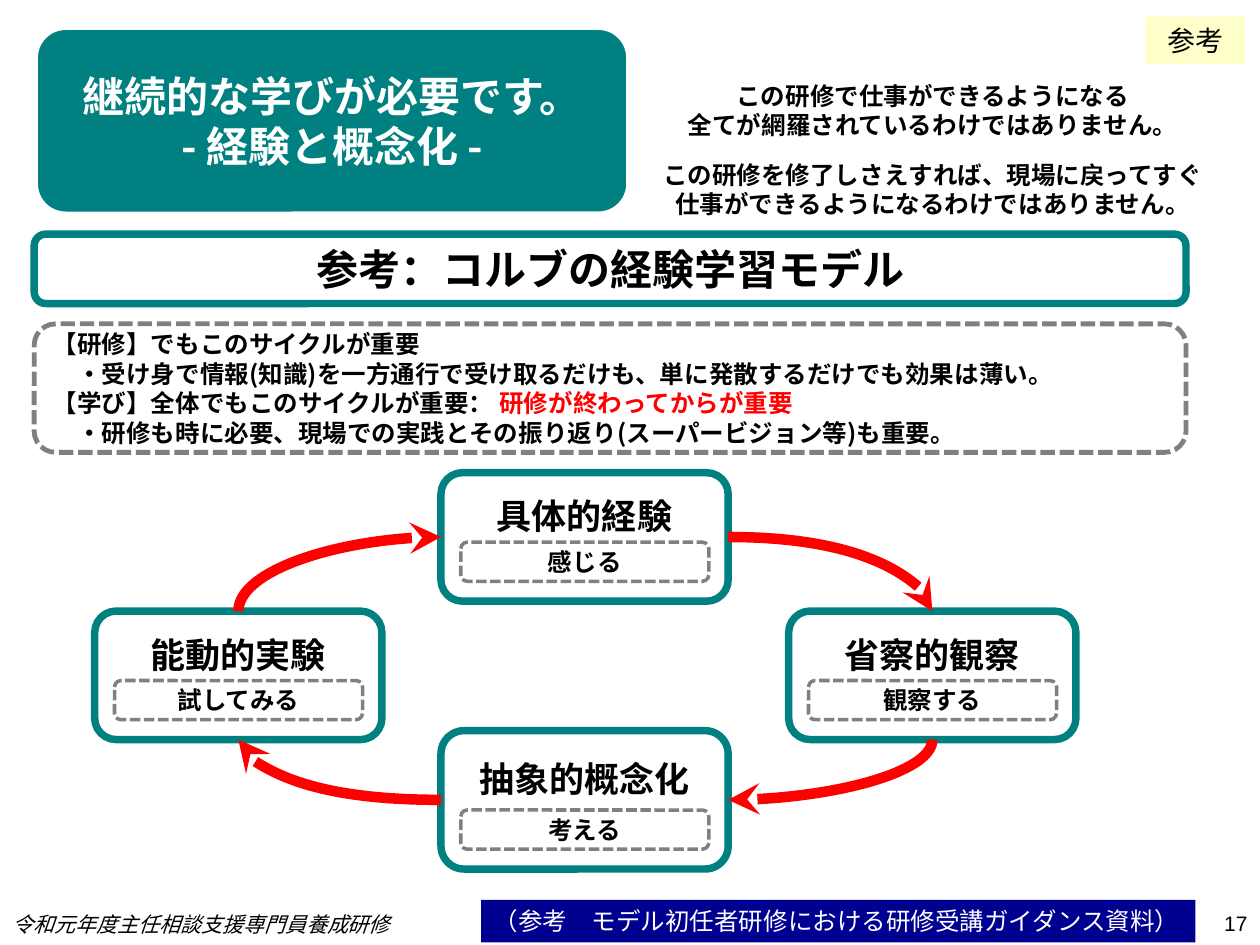
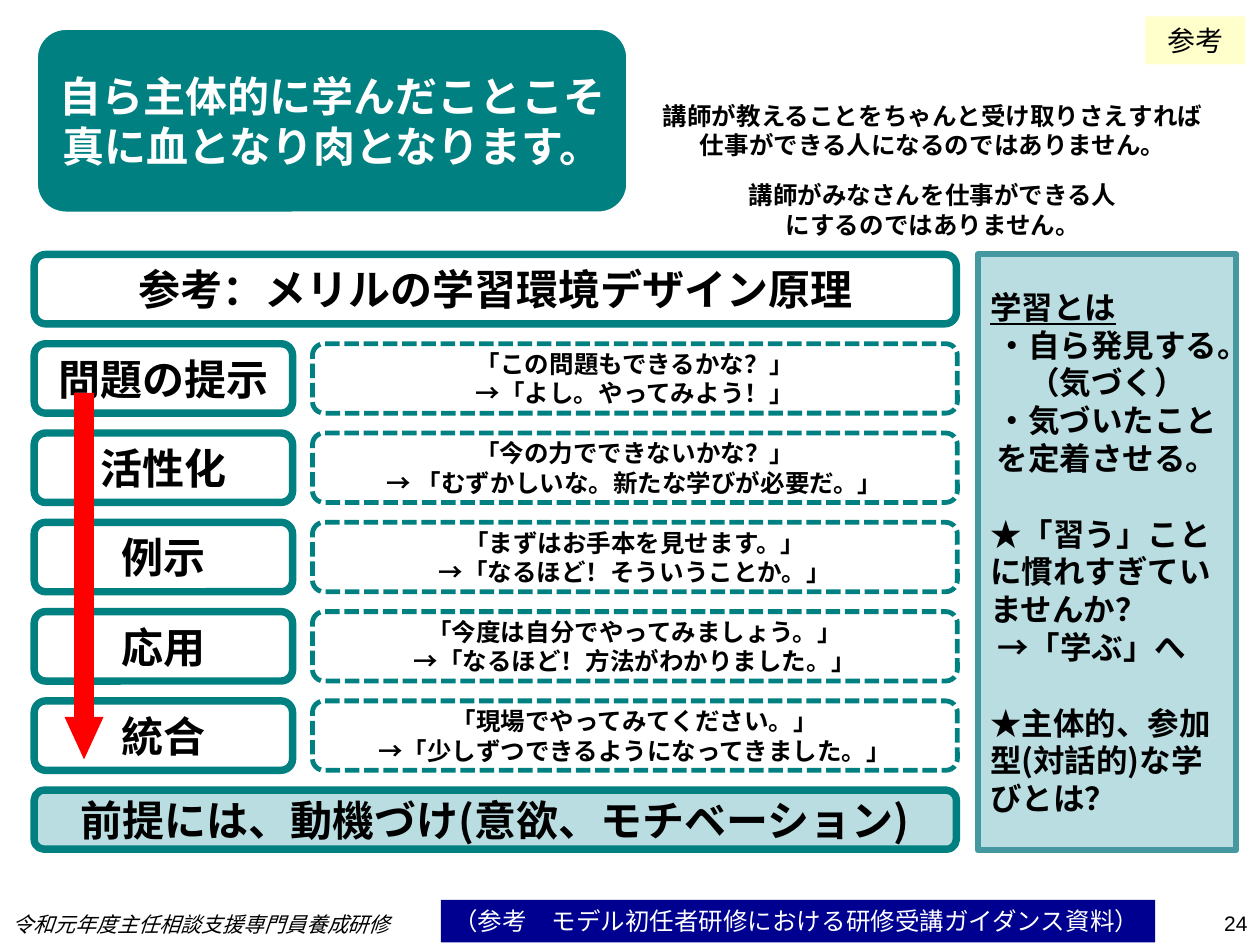
from lxml.etree import SubElement
from pptx import Presentation
from pptx.dml.color import RGBColor
from pptx.enum.dml import MSO_LINE
from pptx.enum.shapes import MSO_CONNECTOR, MSO_SHAPE
from pptx.enum.text import MSO_ANCHOR, PP_ALIGN
from pptx.oxml.ns import qn
from pptx.util import Cm, Pt

COLORS = {
    "teal": "008080",
    "pale_teal": "BADDE1",
    "mid_teal": "4597A0",
    "grey": "808080",
    "red": "FF0000",
    "navy": "000090",
    "cream": "FFFFCC",
    "white": "FFFFFF",
    "black": "000000",
}
JAPANESE_FONT = "Noto Sans CJK JP"
LINE_HEIGHT = 1.2
LEFT_EDGE = 0.69
BAND_HEIGHT = 1.4

HEADING = {"size": Pt(24), "bold": True}
SIDEBAR = {"size": Pt(18), "bold": True}
NODE = {"size": Pt(20), "bold": True}
BODY = {"size": Pt(14), "bold": True}
SOURCE = {"size": Pt(14)}
TAG = {"size": Pt(16)}
FOOTER = {"size": Pt(12), "italic": True}
PAGE_NUMBER = {"size": Pt(12), "name": "Arial"}

THICK_TEAL = {"color": "teal", "width": 4.25}
THICK_WHITE = {"color": "white", "width": 4.25}
DASHED_TEAL = {"color": "teal", "width": 2.75, "dash": MSO_LINE.SQUARE_DOT}
DASHED_GREY = {"color": "grey", "width": 2.75, "dash": MSO_LINE.SQUARE_DOT}
FINE_DASHED_GREY = {**DASHED_GREY, "width": 2}


def rgb(color):
    return RGBColor.from_string(COLORS[color])


def apply_format(target, values):
    for attribute, value in values.items():
        setattr(target, attribute, value)


def write_run(paragraph, text, style, color="black"):
    run = paragraph.add_run()
    run.text = text
    apply_format(run.font, {"name": JAPANESE_FONT, **style})
    run.font.color.rgb = rgb(color)
    SubElement(run.font._element, qn("a:ea"), typeface=run.font.name)


def write_lines(frame, lines, style, color="black", align=PP_ALIGN.CENTER):
    for number, line in enumerate(lines):
        paragraph = frame.add_paragraph() if number else frame.paragraphs[0]
        apply_format(paragraph, {
            "alignment": align,
            "line_spacing": Pt(style["size"].pt * LINE_HEIGHT),
        })
        write_run(paragraph, line, style, color)
    return frame.paragraphs


def add_block(slide, box, preset=MSO_SHAPE.ROUNDED_RECTANGLE, fill=None, line=None):
    block = slide.shapes.add_shape(preset, *map(Cm, box))
    block.shadow.inherit = False
    if fill:
        block.fill.solid()
        block.fill.fore_color.rgb = rgb(fill)
    else:
        block.fill.background()
    if line:
        block.line.color.rgb = rgb(line["color"])
        apply_format(block.line, {
            "width": Pt(line["width"]),
            "dash_style": line.get("dash"),
        })
    else:
        block.line.fill.background()
    return block


def add_label(slide, box, lines, style, color="black", align=PP_ALIGN.CENTER, **look):
    label = add_block(slide, box, **look)
    write_lines(label.text_frame, lines, style, color, align)
    return label


def add_caption(slide, box, text, style, align):
    caption = slide.shapes.add_textbox(*map(Cm, box))
    caption.text_frame.word_wrap = True
    write_lines(caption.text_frame, [text], style, align=align)


def add_heading_band(slide, top, width, text):
    add_label(slide, (LEFT_EDGE, top, width, BAND_HEIGHT), [text], HEADING,
              fill="white", line=THICK_TEAL)


def add_frame(presentation, title_lines, messages, messages_top, source_left, page):
    slide = presentation.slides.add_slide(presentation.slide_layouts[6])
    add_label(slide, (LEFT_EDGE, 0.53, 12.01, 3.81), title_lines, HEADING, "white",
              fill="teal", line=THICK_WHITE)
    for number, message in enumerate(messages):
        add_label(slide, (12.9, messages_top + number * 1.6, 11.81, 1.8), message,
                  BODY, line=THICK_WHITE)
    source = add_label(slide, (source_left, 18.14, 14.4, 0.86),
                       ["（参考　モデル初任者研修における研修受講ガイダンス資料）"],
                       SOURCE, "white", PP_ALIGN.LEFT,
                       preset=MSO_SHAPE.RECTANGLE, fill="navy")
    apply_format(source.text_frame, {
        "word_wrap": False,
        "vertical_anchor": MSO_ANCHOR.TOP,
    })
    add_label(slide, (23.09, 0.33, 2.01, 0.97), ["参考"], TAG,
              preset=MSO_SHAPE.RECTANGLE, fill="cream")
    add_caption(slide, (19.48, 18.24, 5.92, 0.79), page, PAGE_NUMBER, PP_ALIGN.RIGHT)
    add_caption(slide, (0, 18.26, 8.61, 0.79), "令和元年度主任相談支援専門員養成研修",
                FOOTER, PP_ALIGN.LEFT)
    return slide


def add_cycle_node(slide, left, top, height, stage, action):
    width = 5.79
    node = add_label(slide, (left, top, width, height), [stage], NODE, line=THICK_TEAL)
    node.text_frame.margin_bottom = Cm(0.97)
    add_label(slide, (left + 0.4, top + height - 1.19, 5, 0.79), [action], BODY,
              fill="white", line=FINE_DASHED_GREY)
    middle, center = left + width / 2, top + height / 2
    return {
        "top": (middle, top),
        "bottom": (middle, top + height),
        "left": (left, center),
        "right": (left + width, center),
    }


def add_cycle_arrow(slide, start, end, leaves_vertically):
    center_x, center_y = (start[0] + end[0]) / 2, (start[1] + end[1]) / 2
    run_x, run_y = end[0] - start[0], end[1] - start[1]
    if leaves_vertically:
        run_x, run_y = run_y, -run_x
    corners = (center_x - run_x / 2, center_y - run_y / 2,
               center_x + run_x / 2, center_y + run_y / 2)
    arrow = slide.shapes.add_connector(MSO_CONNECTOR.CURVE, *map(Cm, corners))
    arrow.line.color.rgb = rgb("red")
    arrow.line.width = Pt(6)
    properties = arrow._element.spPr
    properties.find(qn("a:prstGeom")).set("prst", "curvedConnector2")
    if leaves_vertically:
        properties.find(qn("a:xfrm")).set("rot", "5400000")
    SubElement(properties.find(qn("a:ln")), qn("a:tailEnd"), type="stealth")
    SubElement(properties, qn("a:effectLst"))


def add_learning_cycle(slide):
    experience = add_cycle_node(slide, 8.89, 9.53, 2.59, "具体的経験", "感じる")
    observation = add_cycle_node(slide, 15.9, 12.32, 2.59, "省察的観察", "観察する")
    concept = add_cycle_node(slide, 8.89, 14.73, 2.79, "抽象的概念化", "考える")
    experiment = add_cycle_node(slide, 1.91, 12.32, 2.59, "能動的実験", "試してみる")
    add_cycle_arrow(slide, experiment["top"], experience["left"], True)
    add_cycle_arrow(slide, experience["right"], observation["top"], False)
    add_cycle_arrow(slide, observation["bottom"], concept["right"], True)
    add_cycle_arrow(slide, concept["left"], experiment["bottom"], False)


def add_cycle_notes(slide):
    notes = add_label(slide, (LEFT_EDGE, 6.53, 23.22, 2.59), [
        "【研修】でもこのサイクルが重要",
        "　・受け身で情報(知識)を一方通行で受け取るだけも、単に発散するだけでも効果は薄い。",
        "【学び】全体でもこのサイクルが重要： ",
        "　・研修も時に必要、現場での実践とその振り返り(スーパービジョン等)も重要。",
    ], BODY, align=PP_ALIGN.LEFT, line=DASHED_GREY)
    write_run(notes.text_frame.paragraphs[2], "研修が終わってからが重要", BODY, "red")


def add_design_stages(slide, stages):
    for number, (stage, cue) in enumerate(stages):
        top = 6.93 + number * 1.8
        add_label(slide, (LEFT_EDGE, top, 5.21, BAND_HEIGHT), [stage], HEADING,
                  line=THICK_TEAL)
        add_label(slide, (6.3, top, 13, BAND_HEIGHT), cue, BODY, line=DASHED_TEAL)
    progress = add_block(slide, (1.3, 7.92, 0.79, 7.39), MSO_SHAPE.DOWN_ARROW, "red")
    progress.adjustments[1] = 1.088


def add_learning_sidebar(slide):
    sidebar = add_label(slide, (19.71, 5.13, 5.21, 12.01), [
        "学習とは",
        "・自ら発見する。",
        "（気づく）",
        "・気づいたことを定着させる。",
        "★「習う」ことに慣れすぎていませんか？",
        " →「学ぶ」へ",
        "★主体的、参加型(対話的)な学びとは？",
    ], SIDEBAR, align=PP_ALIGN.LEFT, preset=MSO_SHAPE.RECTANGLE, fill="pale_teal",
        line={"color": "mid_teal", "width": 3.5})
    paragraphs = sidebar.text_frame.paragraphs
    paragraphs[0].runs[0].font.underline = True
    for paragraph in paragraphs[1:4]:
        paragraph.alignment = PP_ALIGN.CENTER
    for paragraph in (paragraphs[4], paragraphs[6]):
        paragraph.space_before = Pt(SIDEBAR["size"].pt * LINE_HEIGHT)


def build_experience_slide(presentation):
    slide = add_frame(
        presentation,
        ["継続的な学びが必要です。", "- 経験と概念化 -"],
        [["この研修で仕事ができるようになる", "全てが網羅されているわけではありません。"],
         ["この研修を修了しさえすれば、現場に戻ってすぐ仕事ができるようになるわけではありません。"]],
        1.32, 9.7, "17")
    add_heading_band(slide, 4.72, 23.22, "参考：コルブの経験学習モデル")
    add_cycle_notes(slide)
    add_learning_cycle(slide)


def build_design_slide(presentation):
    slide = add_frame(
        presentation,
        ["自ら主体的に学んだことこそ", "真に血となり肉となります。"],
        [["講師が教えることをちゃんと受け取りさえすれば", "仕事ができる人になるのではありません。"],
         ["講師がみなさんを仕事ができる人", "にするのではありません。"]],
        1.73, 8.89, "24")
    add_heading_band(slide, 5.13, 18.59, "参考：メリルの学習環境デザイン原理")
    add_label(slide, (LEFT_EDGE, 15.93, 18.59, 1.19),
              ["前提には、動機づけ(意欲、モチベーション)"], HEADING,
              fill="pale_teal", line=THICK_TEAL)
    add_design_stages(slide, [
        ("問題の提示", ["「この問題もできるかな？」", "→「よし。やってみよう！」"]),
        ("活性化", ["「今の力でできないかな？」", "→ 「むずかしいな。新たな学びが必要だ。」"]),
        ("例示", ["「まずはお手本を見せます。」", "→「なるほど！そういうことか。」"]),
        ("応用", ["「今度は自分でやってみましょう。」", "→「なるほど！方法がわかりました。」"]),
        ("統合", ["「現場でやってみてください。」", "→「少しずつできるようになってきました。」"]),
    ])
    add_learning_sidebar(slide)


def main():
    presentation = Presentation()
    apply_format(presentation, {"slide_width": Cm(25.4), "slide_height": Cm(19.05)})
    build_experience_slide(presentation)
    build_design_slide(presentation)
    presentation.save("out.pptx")


if __name__ == "__main__":
    main()
